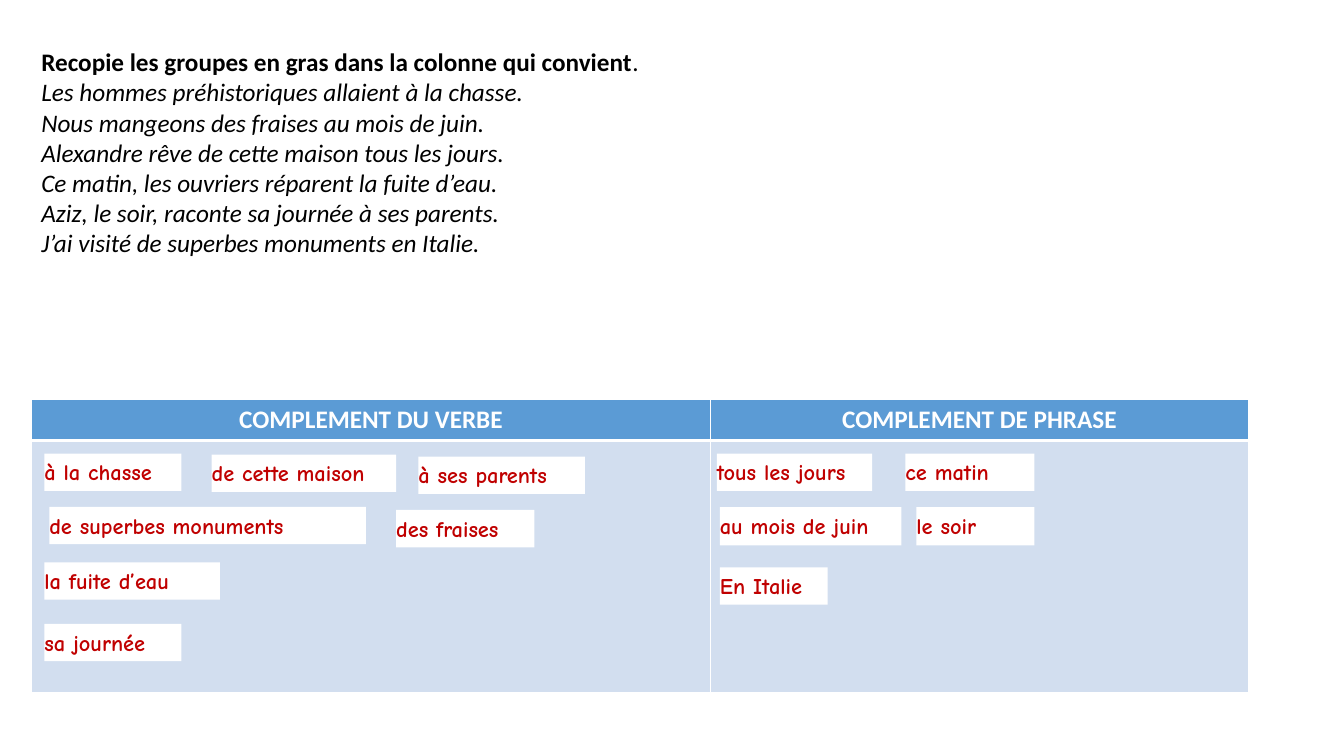
from dataclasses import dataclass

import lxml.etree
import pptx
import pptx.dml.color
import pptx.enum.shapes
import pptx.enum.text
import pptx.oxml.ns
import pptx.util

Inches = pptx.util.Inches
Pt = pptx.util.Pt
qn = pptx.oxml.ns.qn

COLOURS = {
    "text": "000000",
    "white": "FFFFFF",
    "header": "5B9BD5",
    "column": "D2DEEF",
    "answer": "C00000",
}
MAIN_FONT = "Calibri"
ANSWER_FONT = "Comic Neue"

INSTRUCTION = "Recopie les groupes en gras dans la colonne qui convient"
SENTENCES = [
    "Les hommes préhistoriques allaient à la chasse.",
    "Nous mangeons des fraises au mois de juin.",
    "Alexandre rêve de cette maison tous les jours.",
    "Ce matin, les ouvriers réparent la fuite d’eau.",
    "Aziz, le soir, raconte sa journée à ses parents.",
    "J’ai visité de superbes monuments en Italie.",
]


@dataclass(frozen=True)
class Column:
    heading: str
    width: float


@dataclass(frozen=True)
class Answer:
    text: str
    left: float
    top: float
    width: float
    height: float = 0.37


COLUMNS = [Column("COMPLEMENT DU VERBE", 6.74), Column("COMPLEMENT DE PHRASE", 5.33)]
ANSWERS = [
    Answer("à la chasse", 0.44, 4.5, 1.36),
    Answer("des fraises", 3.93, 5.06, 1.37),
    Answer("au mois de juin", 7.14, 5.03, 1.8, 0.38),
    Answer("de cette maison", 2.1, 4.51, 1.83),
    Answer("tous les jours", 7.11, 4.5, 1.54),
    Answer("ce matin", 8.98, 4.5, 1.28),
    Answer("la fuite d’eau", 0.44, 5.58, 1.74),
    Answer("le soir", 9.09, 5.03, 1.17, 0.38),
    Answer("sa journée", 0.44, 6.19, 1.36),
    Answer("à ses parents", 4.15, 4.53, 1.65),
    Answer("de superbes monuments", 0.49, 5.03, 3.14),
    Answer("En Italie", 7.14, 5.63, 1.07),
]


def rgb(name: str) -> pptx.dml.color.RGBColor:
    return pptx.dml.color.RGBColor.from_string(COLOURS[name])


def format_run(run, size: float, colour: str, font: str = MAIN_FONT,
               bold: bool = False, italic: bool = False) -> None:
    run.font.name = font
    run.font.size = Pt(size)
    run.font.color.rgb = rgb(colour)
    run.font.bold = bold
    run.font.italic = italic


def place(shape, left: float, top: float, width: float, height: float) -> None:
    shape.left, shape.top = Inches(left), Inches(top)
    shape.width, shape.height = Inches(width), Inches(height)


def format_frame(frame, top_inset: float, bottom_inset: float) -> None:
    frame.word_wrap = True
    frame.auto_size = pptx.enum.text.MSO_AUTO_SIZE.NONE
    frame.vertical_anchor = pptx.enum.text.MSO_ANCHOR.TOP
    frame.margin_top, frame.margin_bottom = Inches(top_inset), Inches(bottom_inset)


def write_instruction(title) -> None:
    place(title, 0.31, 0.41, 6.18, 0.35)
    format_frame(title.text_frame, 0.05, 0)
    title.text_frame.text = INSTRUCTION
    paragraph = title.text_frame.paragraphs[0]
    paragraph.alignment = pptx.enum.text.PP_ALIGN.LEFT
    format_run(paragraph.runs[0], 18, "text", bold=True)
    full_stop = paragraph.add_run()
    full_stop.text = "."
    format_run(full_stop, 18, "text")


def write_sentences(body) -> None:
    place(body, 0.31, 0.76, 6.18, 1.87)
    format_frame(body.text_frame, 0, 0.05)
    body.text_frame.text = "\n".join(SENTENCES)
    for paragraph in body.text_frame.paragraphs:
        paragraph.space_before = Pt(0)
        properties = paragraph._p.get_or_add_pPr()
        properties.set("marL", "0")
        properties.set("indent", "0")
        lxml.etree.SubElement(properties, qn("a:buNone"))
        format_run(paragraph.runs[0], 18, "text", italic=True)


def add_borders(cell, top: float, bottom: float) -> None:
    """Draw white cell borders; call before filling, as lines precede the fill."""
    properties = cell._tc.get_or_add_tcPr()
    for side, width in {"L": 1, "R": 1, "T": top, "B": bottom}.items():
        line = lxml.etree.SubElement(properties, qn(f"a:ln{side}"), w=str(Pt(width)))
        fill = lxml.etree.SubElement(line, qn("a:solidFill"))
        lxml.etree.SubElement(fill, qn("a:srgbClr"), val=COLOURS["white"])


def fill_cell(cell, colour: str) -> None:
    cell.fill.solid()
    cell.fill.fore_color.rgb = rgb(colour)


def add_complement_table(slide) -> None:
    table = slide.shapes.add_table(2, len(COLUMNS), Inches(0.31), Inches(3.96),
                                   Inches(12.07), Inches(2.91)).table
    table.rows[0].height = Inches(0.41)
    table.rows[1].height = Inches(2.5)
    for index, column in enumerate(COLUMNS):
        table.columns[index].width = Inches(column.width)
        heading, answers = table.cell(0, index), table.cell(1, index)
        add_borders(heading, 1, 3)
        add_borders(answers, 3, 1)
        fill_cell(heading, "header")
        fill_cell(answers, "column")
        heading.vertical_anchor = pptx.enum.text.MSO_ANCHOR.MIDDLE
        heading.text_frame.text = column.heading
        paragraph = heading.text_frame.paragraphs[0]
        paragraph.alignment = pptx.enum.text.PP_ALIGN.CENTER
        format_run(paragraph.runs[0], 18, "white", bold=True)


def add_answer(slide, answer: Answer) -> None:
    label = slide.shapes.add_shape(
        pptx.enum.shapes.MSO_SHAPE.RECTANGLE, Inches(answer.left), Inches(answer.top),
        Inches(answer.width), Inches(answer.height))
    label.shadow.inherit = False
    label.fill.solid()
    label.fill.fore_color.rgb = rgb("white")
    label.line.fill.background()
    frame = label.text_frame
    format_frame(frame, 0.05, 0.05)
    frame.margin_left = frame.margin_right = Inches(0)
    frame.text = answer.text
    paragraph = frame.paragraphs[0]
    paragraph.alignment = pptx.enum.text.PP_ALIGN.LEFT
    format_run(paragraph.runs[0], 16, "answer", ANSWER_FONT, bold=True)


def main() -> None:
    presentation = pptx.Presentation()
    presentation.slide_width = Inches(13.33)
    presentation.slide_height = Inches(7.5)
    slide = presentation.slides.add_slide(presentation.slide_layouts[1])
    write_instruction(slide.shapes.title)
    write_sentences(slide.placeholders[1])
    add_complement_table(slide)
    for answer in ANSWERS:
        add_answer(slide, answer)
    presentation.save("out.pptx")


if __name__ == "__main__":
    main()
